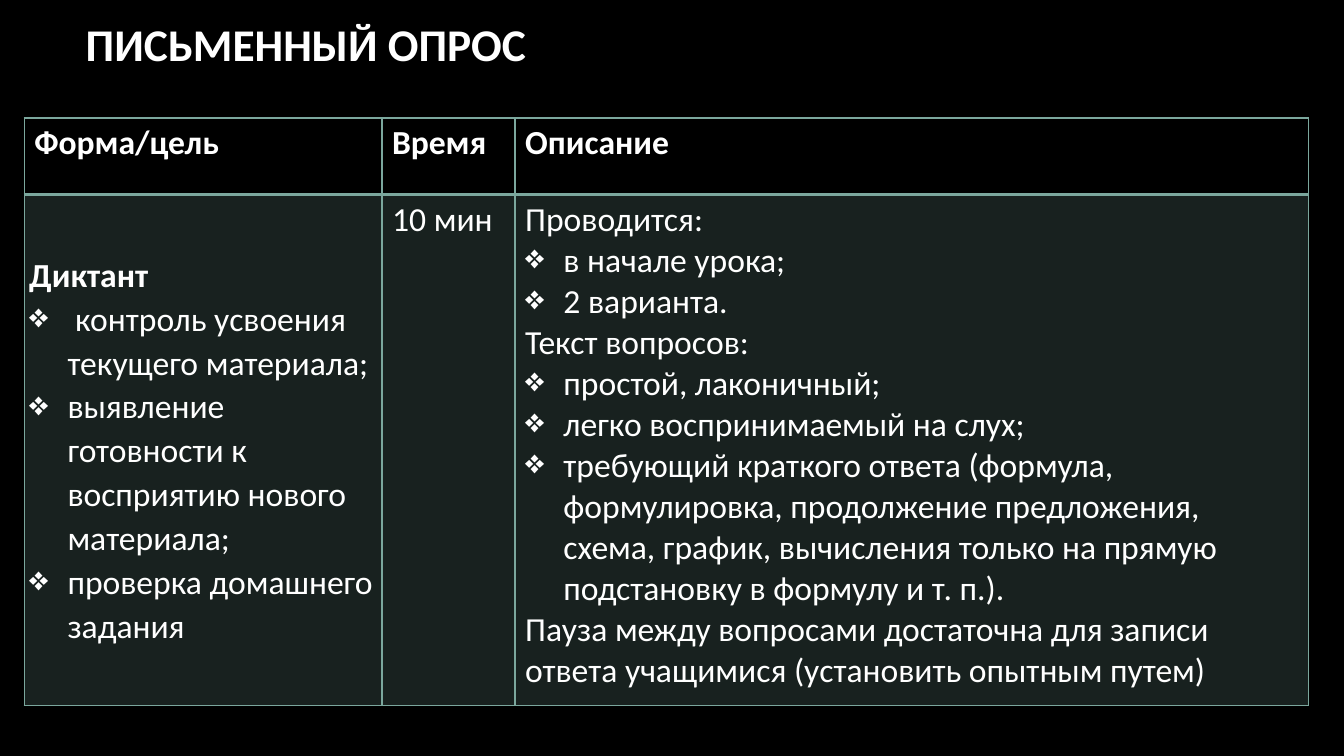
from dataclasses import dataclass

from lxml.etree import SubElement
from pptx import Presentation
from pptx.dml.color import RGBColor
from pptx.enum.text import MSO_ANCHOR, PP_ALIGN
from pptx.oxml import parse_xml
from pptx.oxml.ns import nsdecls, qn
from pptx.util import Inches, Pt


@dataclass(frozen=True)
class Theme:
    font: str = "Calibri"
    background: str = "000000"
    text: str = "FFFFFF"
    accent: str = "7BA79D"
    tint: int = 20  # opacity of body cells, percent
    title_size: float = 32.4
    body_size: float = 24
    thin: float = 1
    thick: float = 2
    indent: float = 0.38


@dataclass
class Line:
    text: str
    bullet: bool = False
    bold: bool = False
    lead: str = ""  # bold run before the text


@dataclass
class Cell:
    lines: list
    header: bool = False
    anchor: MSO_ANCHOR = MSO_ANCHOR.TOP
    inset: float = 0.1
    spacing: float = 1.0


class Deck:
    """Holds the theme and the current slide; lengths are percent of the slide."""

    def __init__(self, theme):
        self.theme = theme
        self.prs = Presentation()
        self.prs.slide_width, self.prs.slide_height = Inches(13.33), Inches(7.5)
        self.s = self.prs.slides.add_slide(self.prs.slide_layouts[5])
        fill = self.s.background.fill
        fill.solid()
        fill.fore_color.rgb = RGBColor.from_string(theme.background)

    def x(self, share):
        return round(self.prs.slide_width * share / 100)

    def y(self, share):
        return round(self.prs.slide_height * share / 100)

    def run(self, p, text, size, bold):
        r = p.add_run()
        r.text = text
        r.font.name, r.font.size, r.font.bold = self.theme.font, Pt(size), bold
        r.font.color.rgb = RGBColor.from_string(self.theme.text)

    def title(self, text, left, top, width, height):
        sp = self.s.shapes.title
        sp.left, sp.top = self.x(left), self.y(top)
        sp.width, sp.height = self.x(width), self.y(height)
        tf = sp.text_frame
        tf.vertical_anchor = MSO_ANCHOR.MIDDLE
        p = tf.paragraphs[0]
        p.alignment = PP_ALIGN.LEFT
        self.run(p, text, self.theme.title_size, True)

    def bullet(self, p):
        pPr = p._p.get_or_add_pPr()
        indent = Inches(self.theme.indent)
        pPr.set("marL", str(indent))
        pPr.set("indent", str(-indent))
        SubElement(pPr, qn("a:buChar")).set("char", "❖")

    def borders(self, cell, **widths):
        tcPr = cell._tc.get_or_add_tcPr()
        for i, side in enumerate("LRTB"):
            width = Pt(widths.get(side, self.theme.thin))
            tcPr.insert(i, parse_xml(
                f'<a:ln{side} {nsdecls("a")} w="{width}"><a:solidFill>'
                f'<a:srgbClr val="{self.theme.accent}"/></a:solidFill></a:ln{side}>'))

    def cell_fill(self, cell, header):
        if header:
            cell.fill.background()
            return
        cell.fill.solid()
        cell.fill.fore_color.rgb = RGBColor.from_string(self.theme.accent)
        color = cell._tc.tcPr.find(".//" + qn("a:srgbClr"))
        SubElement(color, qn("a:alpha")).set("val", str(self.theme.tint * 1000))

    def cell(self, cell, content):
        cell.vertical_anchor = content.anchor
        if content.inset != 0.1:
            cell.margin_left = cell.margin_right = Inches(content.inset)
        tf = cell.text_frame
        for i, line in enumerate(content.lines):
            p = tf.add_paragraph() if i else tf.paragraphs[0]
            p.line_spacing = content.spacing
            if line.bullet:
                self.bullet(p)
            if line.lead:
                self.run(p, line.lead, self.theme.body_size, True)
            self.run(p, line.text, self.theme.body_size, line.bold)
        self.cell_fill(cell, content.header)
        self.borders(cell, **{"B" if content.header else "T": self.theme.thick})

    def table(self, rows, left, top, widths, heights):
        frame = self.s.shapes.add_table(
            len(rows), len(widths), self.x(left), self.y(top),
            self.x(sum(widths)), self.y(sum(heights)))
        table = frame.table
        table.first_row = table.horz_banding = False
        for column, width in zip(table.columns, widths):
            column.width = self.x(width)
        for row, height, contents in zip(table.rows, heights, rows):
            row.height = self.y(height)
            for cell, content in zip(row.cells, contents):
                self.cell(cell, content)


def main():
    deck = Deck(Theme())

    # Title
    deck.title("ПИСЬМЕННЫЙ ОПРОС", 5.63, 1.73, 83.12, 8.13)

    # Table contents
    header = [Cell([Line(name, bold=True)], header=True)
              for name in ("Форма/цель", "Время", "Описание")]
    purpose = Cell([
        Line("Диктант", bold=True),
        Line("контроль усвоения текущего материала;", bullet=True, lead=" "),
        Line("выявление готовности к восприятию нового материала;", bullet=True),
        Line("проверка домашнего задания", bullet=True),
    ], anchor=MSO_ANCHOR.MIDDLE, inset=0.05, spacing=1.07)
    duration = Cell([Line("10 мин")])
    description = Cell([
        Line("Проводится:"),
        Line("в начале урока;", bullet=True),
        Line("2 варианта.", bullet=True),
        Line("Текст вопросов:"),
        Line("простой, лаконичный;", bullet=True),
        Line("легко воспринимаемый на слух;", bullet=True),
        Line("требующий краткого ответа (формула, формулировка, продолжение "
             "предложения, схема, график, вычисления только на прямую "
             "подстановку в формулу и т. п.).", bullet=True),
        Line("Пауза между вопросами достаточна для записи ответа учащимися "
             "(установить опытным путем)"),
    ])

    # Table
    deck.table([header, [purpose, duration, description]], 1.8, 15.6,
               widths=(26.63, 9.9, 59.04), heights=(10.13, 67.6))

    deck.prs.save("out.pptx")


if __name__ == "__main__":
    main()
